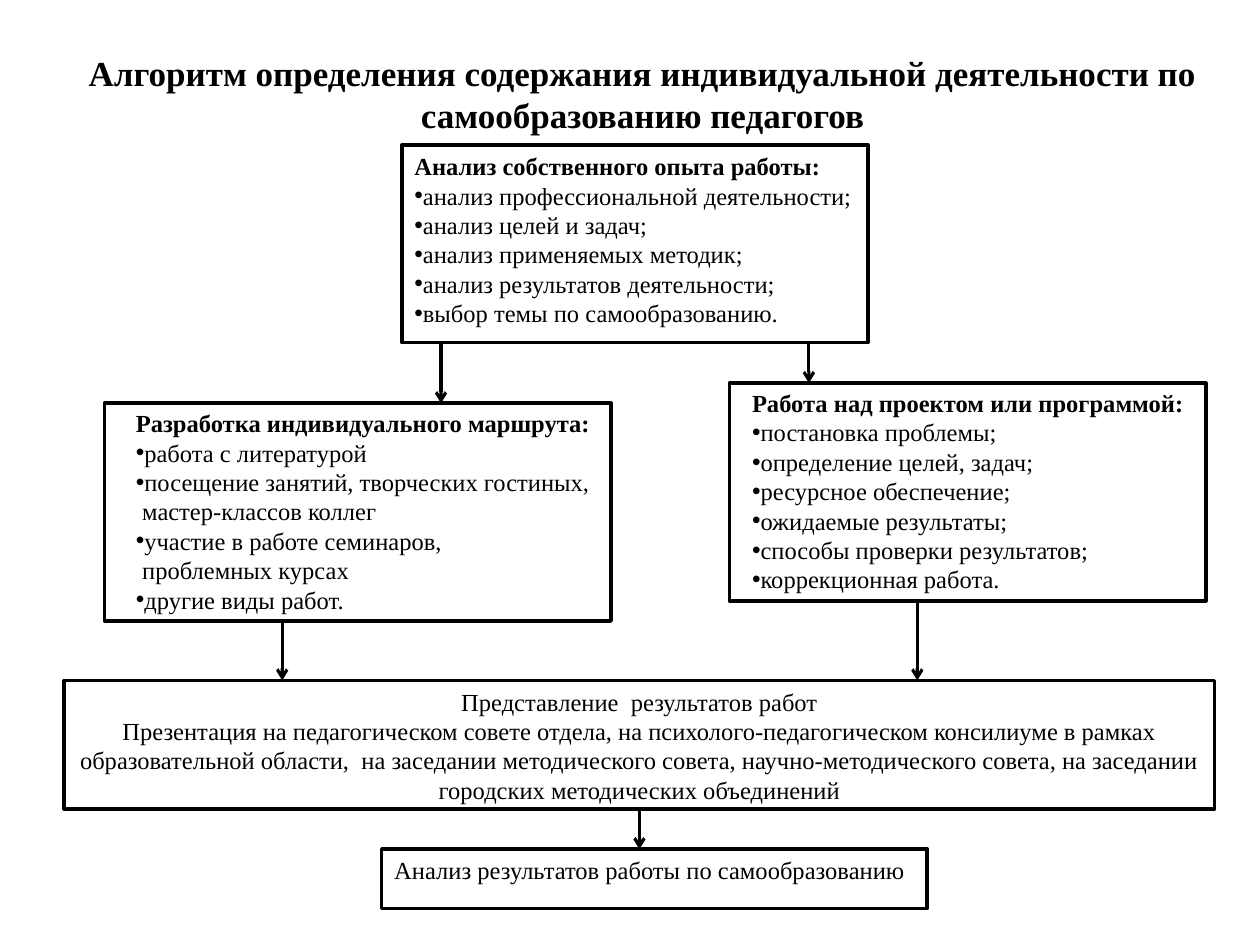
from dataclasses import dataclass
from typing import NamedTuple

from lxml.etree import SubElement
from pptx import Presentation
from pptx.dml.color import RGBColor
from pptx.enum.shapes import MSO_CONNECTOR as Connector, MSO_SHAPE as Shape
from pptx.enum.text import MSO_AUTO_SIZE as AutoSize, PP_ALIGN as Align
from pptx.oxml.ns import qn
from pptx.util import Inches, Pt

COLUMNS, ROWS = 100, 75
WIDTH, HEIGHT = Inches(10), Inches(7.5)
BOTTOM_SIDE = 2


@dataclass(frozen=True)
class Theme:
    font: str = "Times New Roman"
    ink: RGBColor = RGBColor(0, 0, 0)
    title_size: float = 20
    body_size: float = 14
    frame_width: float = 2
    arrow_width: float = 1.75
    continuation_indent: float = 0.05


class Area(NamedTuple):
    column: float
    row: float
    columns: float
    rows: float

    @property
    def bottom(self) -> float:
        return self.row + self.rows


class Line(NamedTuple):
    text: str
    bold: bool = False
    bullet: bool = False
    continued: bool = False


class Node(NamedTuple):
    frame: Area
    text_area: Area
    lines: list[Line]
    align: Align = Align.LEFT


class Arrow(NamedTuple):
    column: float
    source: str
    target: str
    from_middle: bool = False


THEME = Theme()
TITLE = "Алгоритм определения содержания индивидуальной деятельности по самообразованию педагогов"


def heading(text: str) -> Line:
    return Line(text, bold=True)


def bullets(*texts: str) -> list[Line]:
    return [Line(text, bullet=True) for text in texts]


NODES = {
    "project": Node(
        Area(57.9, 30.4, 37.8, 17.3), Area(58.7, 30.3, 37.8, 17.5),
        [heading("Работа над проектом или программой:"),
         *bullets("постановка проблемы;", "определение целей, задач;",
                  "ресурсное обеспечение;", "ожидаемые результаты;",
                  "способы проверки результатов;", "коррекционная работа.")]),
    "route": Node(
        Area(8.3, 32, 40.2, 17.3), Area(9.8, 31.9, 50, 17.6),
        [heading("Разработка индивидуального маршрута:"),
         *bullets("работа с литературой", "посещение занятий, творческих гостиных,"),
         Line("мастер-классов коллег", continued=True),
         *bullets("участие в работе семинаров,"),
         Line("проблемных курсах", continued=True),
         *bullets("другие виды работ.")]),
    "experience": Node(
        Area(31.9, 11.5, 37, 15.7), Area(31.9, 11.5, 42.9, 15.1),
        [heading("Анализ собственного опыта работы:"),
         *bullets("анализ профессиональной деятельности;", "анализ целей и задач;",
                  "анализ применяемых методик;", "анализ результатов деятельности;",
                  "выбор темы по самообразованию.")]),
    "results": Node(
        Area(5.1, 54, 91.3, 10.2), Area(4.3, 54, 92.9, 10.4),
        [Line("Представление  результатов работ"),
         Line("Презентация на педагогическом совете отдела, на психолого-педагогическом "
              "консилиуме в рамках образовательной области,  на заседании методического "
              "совета, научно-методического совета, на заседании городских методических "
              "объединений")],
        Align.CENTER),
    "review": Node(
        Area(30.3, 67.4, 43.3, 4.7), Area(18.5, 67.4, 66.1, 3.4),
        [Line("Анализ результатов работы по самообразованию")], Align.CENTER),
}

ARROWS = [
    Arrow(35, "experience", "route"),
    Arrow(64.2, "experience", "project"),
    Arrow(22.4, "route", "results"),
    Arrow(72.8, "project", "results"),
    Arrow(50.75, "results", "review", from_middle=True),
]


def across(columns: float) -> int:
    return round(WIDTH * columns / COLUMNS)


def down(rows: float) -> int:
    return round(HEIGHT * rows / ROWS)


def place(area: Area) -> tuple[int, int, int, int]:
    return across(area.column), down(area.row), across(area.columns), down(area.rows)


def add_text(slide, area: Area, lines: list[Line], *, size: float, align: Align) -> None:
    text_frame = slide.shapes.add_textbox(*place(area)).text_frame
    text_frame.word_wrap = True
    text_frame.auto_size = AutoSize.SHAPE_TO_FIT_TEXT
    for index, line in enumerate(lines):
        paragraph = text_frame.paragraphs[0] if index == 0 else text_frame.add_paragraph()
        paragraph.alignment = align
        properties = paragraph._p.get_or_add_pPr()
        if line.bullet:
            SubElement(properties, qn("a:buFont"), typeface="Arial")
            SubElement(properties, qn("a:buChar"), char="•")
        if line.continued:
            properties.set("marL", str(Inches(THEME.continuation_indent)))
        run = paragraph.add_run()
        run.text = line.text
        run.font.name = THEME.font
        run.font.size = Pt(size)
        run.font.bold = line.bold
        run.font.color.rgb = THEME.ink


def add_frame(slide, area: Area):
    shape = slide.shapes.add_shape(Shape.RECTANGLE, *place(area))
    shape.shadow.inherit = False
    shape.fill.background()
    shape.line.color.rgb = THEME.ink
    shape.line.width = Pt(THEME.frame_width)
    return shape


def add_arrow(slide, arrow: Arrow, frames: dict) -> None:
    x = across(arrow.column)
    connector = slide.shapes.add_connector(
        Connector.STRAIGHT, x, down(NODES[arrow.source].frame.bottom),
        x, down(NODES[arrow.target].frame.row))
    if arrow.from_middle:
        connector.begin_connect(frames[arrow.source], BOTTOM_SIDE)
    connector.line.color.rgb = THEME.ink
    connector.line.width = Pt(THEME.arrow_width)
    SubElement(connector.line._get_or_add_ln(), qn("a:tailEnd"), type="arrow")
    SubElement(connector._element.spPr, qn("a:effectLst"))


def main() -> None:
    presentation = Presentation()
    presentation.slide_width, presentation.slide_height = WIDTH, HEIGHT
    slide = presentation.slides.add_slide(presentation.slide_layouts[6])
    add_text(slide, Area(2, 3.6, 98, 13.1), [heading(TITLE)],
             size=THEME.title_size, align=Align.CENTER)
    for node in NODES.values():
        add_text(slide, node.text_area, node.lines, size=THEME.body_size, align=node.align)
    frames = {name: add_frame(slide, node.frame) for name, node in NODES.items()}
    for arrow in ARROWS:
        add_arrow(slide, arrow, frames)
    presentation.save("out.pptx")


if __name__ == "__main__":
    main()
